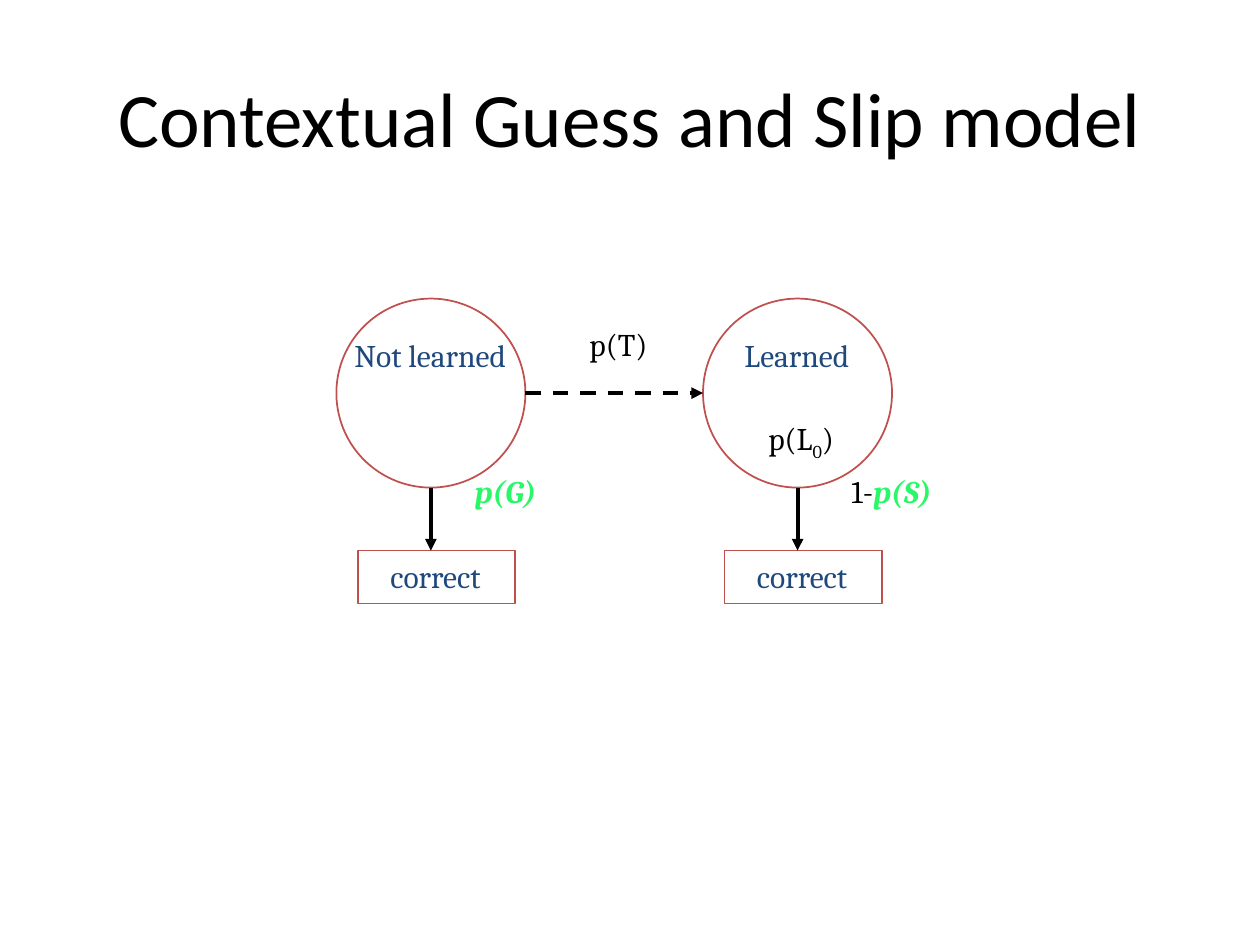
from lxml import etree
from pptx import Presentation
from pptx.dml.color import RGBColor
from pptx.enum.dml import MSO_LINE
from pptx.enum.shapes import MSO_CONNECTOR, MSO_SHAPE
from pptx.enum.text import MSO_ANCHOR, PP_ALIGN
from pptx.oxml.ns import qn
from pptx.util import Inches, Pt

OVAL, RECT = MSO_SHAPE.OVAL, MSO_SHAPE.RECTANGLE
STRAIGHT = MSO_CONNECTOR.STRAIGHT
DASH = MSO_LINE.DASH
LEFT, CENTER = PP_ALIGN.LEFT, PP_ALIGN.CENTER
TOP, MIDDLE = MSO_ANCHOR.TOP, MSO_ANCHOR.MIDDLE

COLORS = {"text": "000000", "node": "1F497D", "outline": "C0504D", "context": "28F868"}
CIRCLE = 1.5
LABEL_H = 0.4


def rgb(name):
    return RGBColor.from_string(COLORS[name])


def add_text(s, box, runs, align=LEFT, anchor=TOP, font="Cambria", size=18):
    tf = s.shapes.add_textbox(*map(Inches, box)).text_frame
    tf.word_wrap = True
    tf.vertical_anchor = anchor
    p = tf.paragraphs[0]
    p.alignment = align
    for text, color in runs:
        r = p.add_run()
        r.text = text
        r.font.name = font
        r.font.size = Pt(size)
        r.font.color.rgb = rgb(color)
        if color == "context":
            r.font.bold = r.font.italic = True
    return p


def add_outline(s, kind, box):
    sp = s.shapes.add_shape(kind, *map(Inches, box))
    sp.shadow.inherit = False
    sp.fill.background()
    sp.line.color.rgb = rgb("outline")
    sp.line.width = Pt(1)


def add_arrow(s, start, end, dash=None):
    cx = s.shapes.add_connector(STRAIGHT, *map(Inches, (*start, *end)))
    cx.line.color.rgb = rgb("text")
    cx.line.width = Pt(2.25)
    if dash:
        cx.line.dash_style = dash
    etree.SubElement(cx.line._get_or_add_ln(), qn("a:tailEnd"), type="triangle")
    etree.SubElement(cx._element.spPr, qn("a:effectLst"))


def add_title(s, box):
    add_text(s, box, [("Contextual Guess and Slip model", "text")],
             CENTER, MIDDLE, "Calibri", 44)


def add_state(s, x, y, name, emission, emission_dx):
    bottom, rect_y = y + CIRCLE, y + 2
    middle = x + CIRCLE / 2
    add_outline(s, OVAL, (x, y, CIRCLE, CIRCLE))
    add_text(s, (x - 0.17, y + 0.25, 1.83, LABEL_H), [(name, "node")], CENTER)
    add_outline(s, RECT, (x + 0.17, rect_y, 1.25, 0.42))
    add_text(s, (x + 0.33, rect_y, 1.17, LABEL_H), [("correct", "node")])
    add_arrow(s, (middle, bottom), (middle, rect_y))
    add_text(s, (x + emission_dx, bottom - 0.17, 1.17, LABEL_H), emission)


def add_model(s, x, y, step):
    learned_x = x + step
    middle = y + CIRCLE / 2
    add_state(s, x, y, "Not learned", [("p(G)", "context")], 1)
    add_state(s, learned_x, y, "Learned", [("1-", "text"), ("p(S)", "context")], 1.08)
    add_arrow(s, (x + CIRCLE, middle), (learned_x, middle), DASH)
    add_text(s, (x + 1.91, y + 0.16, 0.75, LABEL_H), [("p(T)", "text")])
    p = add_text(s, (learned_x + 0.42, y + 0.91, 1, LABEL_H),
                 [("p(L", "text"), ("0", "text"), (")", "text")])
    p.runs[1].font._element.set("baseline", "-25000")


def main():
    prs = Presentation()
    prs.slide_width, prs.slide_height = Inches(10), Inches(7.5)
    s = prs.slides.add_slide(prs.slide_layouts[6])
    add_title(s, (0.5, 0.3, 9, 1.25))
    add_model(s, 2.67, 2.37, 2.91)
    prs.save("out.pptx")


if __name__ == "__main__":
    main()
